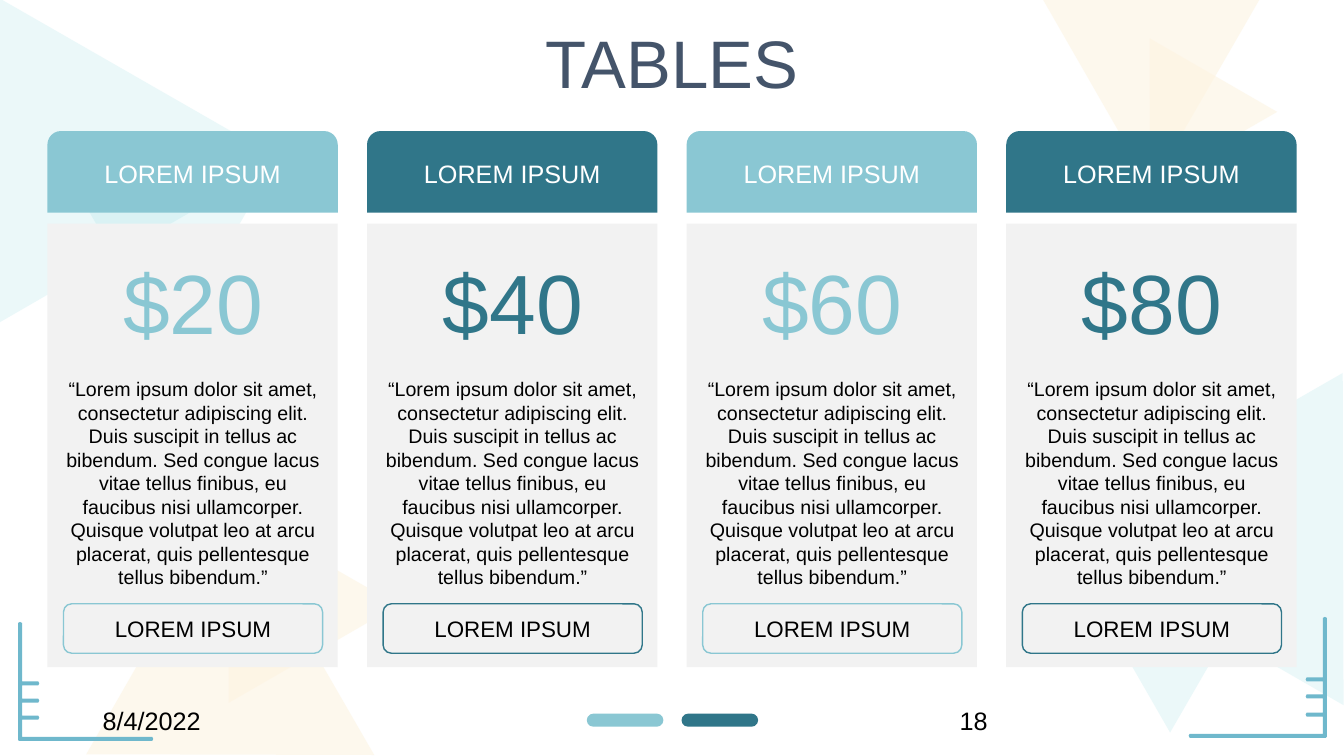
import pptx
import pptx.dml.color
import pptx.enum.shapes
import pptx.enum.text
import pptx.oxml
import pptx.oxml.ns
import pptx.util

PX = 9144  # EMU, 100 px to the inch
FORM = pptx.enum.shapes.MSO_SHAPE
ALIGN = pptx.enum.text.PP_ALIGN
ANCHOR = pptx.enum.text.MSO_ANCHOR

LIGHT, DARK = "8AC7D3", "307689"
MINT, CREAM = ("85D8DE", 16), ("FDF4E1", 60)
GREY, LINE, INK = "F2F2F2", "6FB8CC", "000000"
LABEL = "LOREM IPSUM"
BODY = (
    "“Lorem ipsum dolor sit amet, consectetur adipiscing elit. "
    "Duis suscipit in tellus ac bibendum. Sed congue lacus vitae tellus "
    "finibus, eu faucibus nisi ullamcorper. Quisque volutpat leo at arcu "
    "placerat, quis pellentesque tellus bibendum.”"
)
PRICES = [("$20", LIGHT), ("$40", DARK), ("$60", LIGHT), ("$80", DARK)]
CARD_LEFT, CARD_STEP, CARD_WIDE = 47, 317, 288
TRIANGLES = [
    ((-92, -20, 323, 278), 330, MINT),
    ((84, 110, 219, 188), 60, MINT),
    ((1095, 351, 331, 285), 30, MINT),
    ((1021, 485, 224, 193), 300, MINT),
    ((49, 563, 287, 247), 240, CREAM),
    ((172, 493, 194, 167), 330, CREAM),
    ((1007, -47, 216, 186), 300, CREAM),
    ((1099, 66, 146, 126), 210, CREAM),
]


def scale(box):
    return [pptx.util.Emu(n * PX) for n in box]


def paint(color, code):
    color.rgb = pptx.dml.color.RGBColor.from_string(code)


def fill(shape, code):
    shape.shadow.inherit = False
    shape.fill.solid()
    paint(shape.fill.fore_color, code)
    shape.line.fill.background()


def write(shape, text, size, code, align=ALIGN.CENTER, anchor=ANCHOR.MIDDLE):
    frame = shape.text_frame
    frame.word_wrap = True
    frame.vertical_anchor = anchor
    frame.text = text
    para = frame.paragraphs[0]
    para.alignment = align
    font = para.runs[0].font
    font.name = "Arial"
    font.size = pptx.util.Pt(size)
    paint(font.color, code)
    return para


def add_form(slide, kind, box, code):
    shape = slide.shapes.add_shape(kind, *scale(box))
    fill(shape, code)
    return shape


def add_text(slide, box, text, size, code, inset=0, **place):
    shape = slide.shapes.add_textbox(*scale(box))
    if not inset:
        frame = shape.text_frame
        frame.margin_left = frame.margin_right = 0
        frame.margin_top = frame.margin_bottom = 0
    return write(shape, text, size, code, **place)


def add_triangle(slide, box, turn, tint):
    code, alpha = tint
    shape = add_form(slide, FORM.ISOSCELES_TRIANGLE, box, code)
    shape.rotation = turn
    color = shape.fill._xPr.find(".//" + pptx.oxml.ns.qn("a:srgbClr"))
    mark = pptx.oxml.parse_xml(
        f'<a:alpha {pptx.oxml.ns.nsdecls("a")} val="{alpha * 1000}"/>'
    )
    color.append(mark)


def add_corner(slide, left, top, side, reach, tick, ticks, depth):
    """Draw a ruler corner; side is 1 to open right, -1 to open left."""
    points = [(0, 1), (2, 0), (4, 1)]
    for y in ticks:
        points += [(4, y), (tick - 1, y), (tick, y + 2),
                   (tick - 1, y + 4), (4, y + 4)]
    points += [(4, depth - 4), (reach - 1, depth - 4), (reach, depth - 2),
               (reach - 1, depth), (1, depth), (0, depth - 1)]
    spots = [(left + side * x, top + y) for x, y in points]
    path = slide.shapes.build_freeform(*spots[0], scale=PX)
    path.add_line_segments(spots[1:], close=True)
    fill(path.convert_to_shape(), LINE)


def add_card(slide, left, price, code):
    head = add_form(slide, FORM.ROUND_2_SAME_RECTANGLE,
                    (left, 130, CARD_WIDE, 81), code)
    write(head, LABEL, 18, "FFFFFF")
    add_form(slide, FORM.RECTANGLE, (left, 222, CARD_WIDE, 440), GREY)
    button = add_form(slide, FORM.ROUNDED_RECTANGLE,
                      (left + 16, 599, 257, 49), GREY)
    button.fill.background()
    paint(button.line.color, code)
    button.line.width = pptx.util.Pt(1)
    write(button, LABEL, 16, INK)
    add_text(slide, (left + 40, 248, 209, 101), price, 60, code)
    para = add_text(slide, (left + 16, 374, 257, 188), BODY, 14, INK,
                    anchor=ANCHOR.TOP)
    para.line_spacing = pptx.util.Pt(16.8)


def main():
    deck = pptx.Presentation()
    deck.slide_width, deck.slide_height = scale((1333, 750))
    slide = deck.slides.add_slide(deck.slide_layouts[6])
    for box, turn, tint in TRIANGLES:
        add_triangle(slide, box, turn, tint)
    add_corner(slide, 18, 617, 1, 134, 21, (59, 76, 93), 118)
    add_corner(slide, 1316, 612, -1, 137, 21, (60, 77, 95), 120)
    add_text(slide, (47, 21, 1239, 81), "TABLES", 48, "44546A",
             anchor=ANCHOR.TOP)
    for left, code in ((582, LIGHT), (676, DARK)):
        pill = add_form(slide, FORM.ROUNDED_RECTANGLE,
                        (left, 708, 76, 13), code)
        pill.adjustments[0] = 0.5
    for left, text in ((92, "8/4/2022"), (942, "18")):
        add_text(slide, (left, 695, 300, 40), text, 18, INK, inset=1,
                 align=ALIGN.LEFT, anchor=ANCHOR.TOP)
    for i, (price, code) in enumerate(PRICES):
        add_card(slide, CARD_LEFT + i * CARD_STEP, price, code)
    deck.save("out.pptx")


if __name__ == "__main__":
    main()
